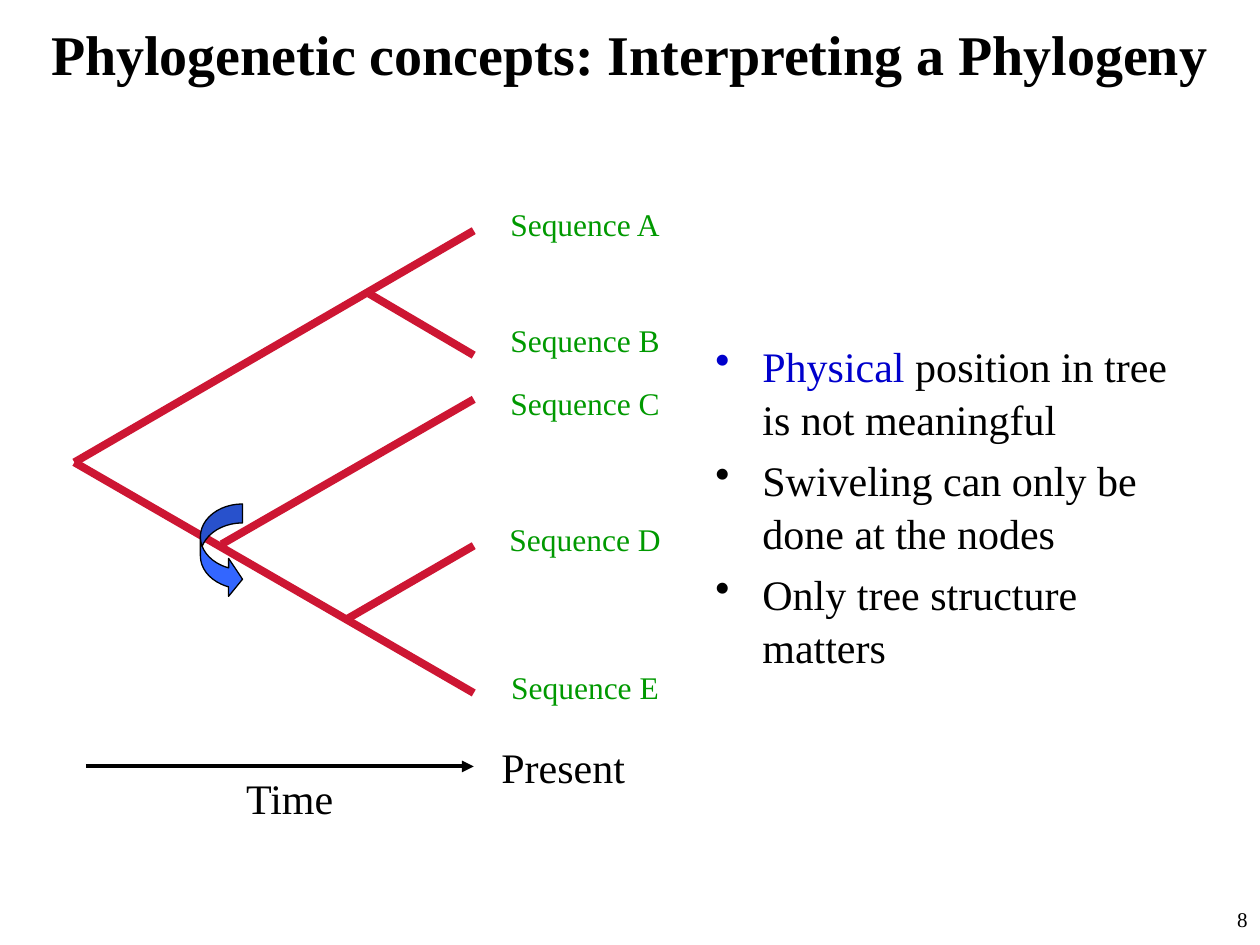
"""Build a slide on how to read a phylogeny."""
from lxml import etree
from pptx import Presentation
from pptx import util as u
from pptx.dml.color import RGBColor
from pptx.enum import shapes, text
from pptx.oxml import ns

INK = {"black": "000000", "red": "CD1633", "green": "009900",
       "blue": "0000CC", "arrow": "3366FF"}
ALIGN = text.PP_ALIGN
Cm = u.Cm

deck = Presentation()
deck.slide_width, deck.slide_height = Cm(25.4), Cm(19.05)
slide = deck.slides.add_slide(deck.slide_layouts[6])


def write(paras, box, size=24, ink="black", bold=False, align=ALIGN.CENTER,
          anchor=text.MSO_ANCHOR.TOP, wrap=True, inset=0.13, bullet=False):
    frame = slide.shapes.add_textbox(*map(Cm, box)).text_frame
    frame.word_wrap = wrap
    frame.vertical_anchor = anchor
    frame.margin_top = Cm(inset)
    for i, runs in enumerate(paras):
        para = frame.paragraphs[0] if i == 0 else frame.add_paragraph()
        para.alignment = align
        if bullet:
            para.line_spacing = 1.05
            para.space_before = u.Pt(size * 0.2)
            props = para._p.get_or_add_pPr()
            props.set("marL", str(Cm(0.95)))
            props.set("indent", str(Cm(-0.95)))
            etree.SubElement(props, ns.qn("a:buChar")).set("char", "•")
        for words, tint in runs:
            run = para.add_run()
            run.text = words
            run.font.name = "Times New Roman"
            run.font.size = u.Pt(size)
            run.font.bold = bold
            run.font.color.rgb = RGBColor.from_string(INK[tint or ink])


def draw(start, end, ink, width):
    line = slide.shapes.add_connector(
        shapes.MSO_CONNECTOR.STRAIGHT, *map(Cm, start + end))
    line.line.color.rgb = RGBColor.from_string(INK[ink])
    line.line.width = u.Pt(width)
    etree.SubElement(line._element.spPr, ns.qn("a:effectLst"))
    return line


write([[("Phylogenetic concepts: Interpreting a Phylogeny", None)]],
      (0, 0, 25.4, 2.13), size=32, bold=True, anchor=text.MSO_ANCHOR.MIDDLE)

write([[("Physical ", "blue"), ("position in tree is not meaningful", None)],
       [("Swiveling can only be done at the nodes", None)],
       [("Only tree structure matters", None)]],
      (14.17, 3.12, 9.91, 13.82), align=ALIGN.LEFT, inset=3.69, bullet=True)

write([[("8", None)]], (20.12, 18.14, 5.28, 0.91), size=12, align=ALIGN.RIGHT)

root, tip = (1.5, 9.32), 9.55
for start, end in [(root, (tip, 4.65)), (root, (tip, 13.97)),
                   ((4.47, 10.97), (tip, 8.05)),
                   ((7.01, 12.47), (tip, 11)),
                   ((7.44, 5.92), (tip, 7.16))]:
    draw(start, end, "red", 4.5)

for name, top in zip("ABCDE", (4.01, 6.35, 7.62, 10.36, 13.34)):
    write([[(f"Sequence {name}", None)]], (9.53, top, 4.53, 1.27),
          size=18, ink="green", wrap=False)

axis = draw((1.73, 15.45), (tip, 15.45), "black", 2.25)
tail = etree.SubElement(axis.line._get_or_add_ln(), ns.qn("a:tailEnd"))
tail.set("type", "triangle")
write([[("Time", None)]], (4.47, 15.45, 2.74, 1.27))
write([[("Present", None)]], (tip, 14.81, 3.61, 1.27))

swivel = slide.shapes.add_shape(
    shapes.MSO_SHAPE.CURVED_RIGHT_ARROW, *map(Cm, (4.04, 10.16, 0.85, 1.9)))
swivel.shadow.inherit = False
for i, value in enumerate((0.45, 0.9, 0.33)):
    swivel.adjustments[i] = value
swivel.fill.solid()
swivel.fill.fore_color.rgb = RGBColor.from_string(INK["arrow"])
swivel.line.color.rgb = RGBColor.from_string(INK["black"])
swivel.line.width = u.Pt(0.75)

deck.save("out.pptx")
